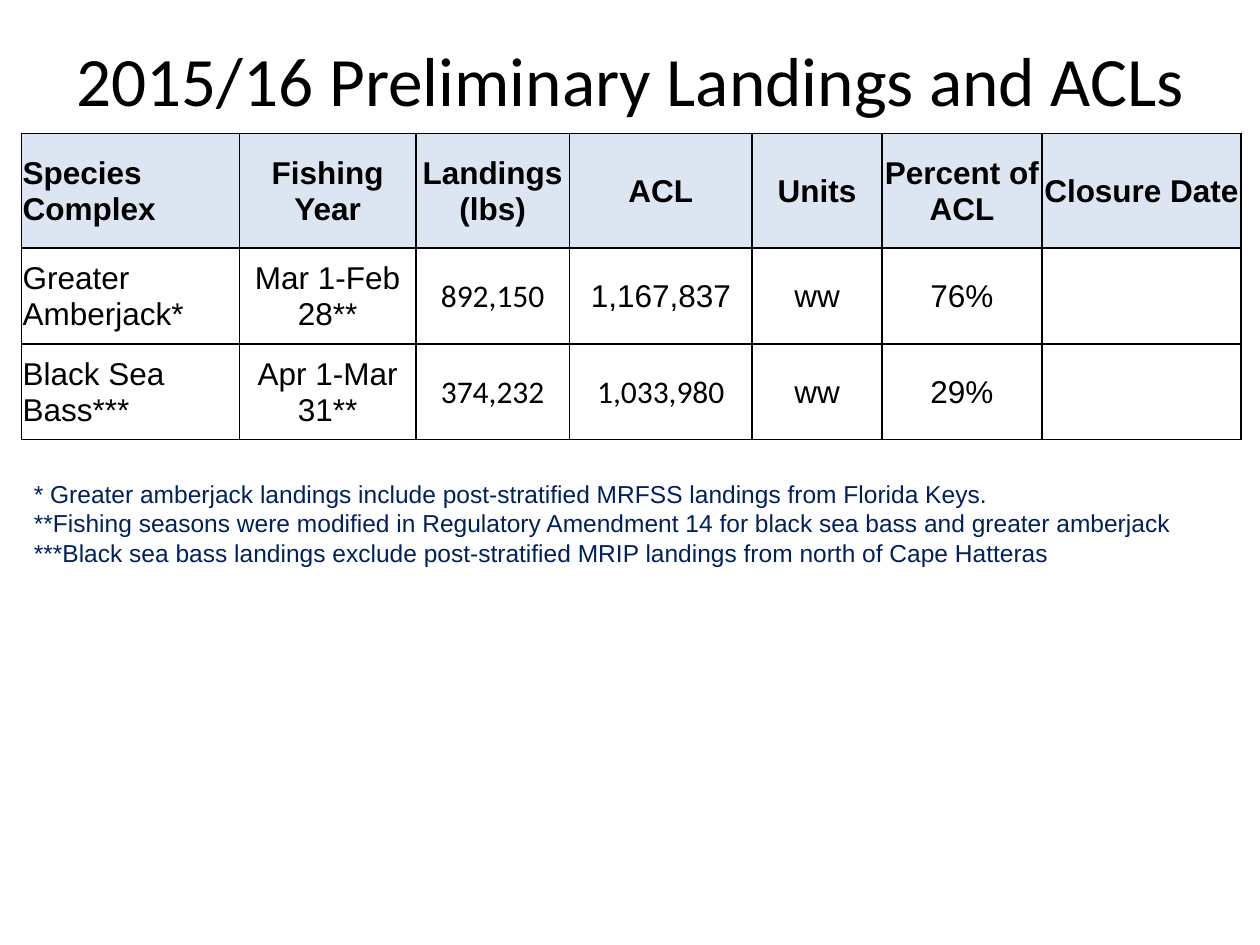
from lxml.etree import SubElement
from pptx import Presentation
from pptx.dml.color import RGBColor
from pptx.enum.text import MSO_ANCHOR, PP_ALIGN
from pptx.oxml.ns import qn
from pptx.util import Inches, Pt

COL_WIDTHS = [1.73, 1.4, 1.22, 1.45, 1.03, 1.27, 1.58]
ROW_HEIGHTS = [0.91, 0.76, 0.76]
ROWS = [
    ["Species Complex", "Fishing Year", "Landings (lbs)", "ACL", "Units",
     "Percent of ACL", "Closure Date"],
    ["Greater Amberjack*", "Mar 1-Feb 28**", "892,150", "1,167,837", "ww", "76%", ""],
    ["Black Sea Bass***", "Apr 1-Mar 31**", "374,232", "1,033,980", "ww", "29%", ""],
]
CALIBRI_VALUES = {"892,150", "374,232", "1,033,980"}
NOTES = [
    "* Greater amberjack landings include post-stratified MRFSS landings from Florida Keys.",
    "**Fishing seasons were modified in Regulatory Amendment 14 for black sea bass "
    "and greater amberjack",
    "***Black sea bass landings exclude post-stratified MRIP landings from north of "
    "Cape Hatteras",
]


def rgb(color):
    return RGBColor.from_string(color)


def write(tf, lines, size=18, font="Arial", color="000000", bold=False, align=PP_ALIGN.LEFT):
    for i, line in enumerate(lines):
        p = tf.paragraphs[0] if i == 0 else tf.add_paragraph()
        p.alignment = align
        r = p.add_run()
        r.text = line
        r.font.size = Pt(size)
        r.font.name = font
        r.font.bold = bold
        r.font.color.rgb = rgb(color)


def set_borders(cell, color="000000", width=1):
    tc_pr = cell._tc.get_or_add_tcPr()
    for i, side in enumerate(("a:lnL", "a:lnR", "a:lnT", "a:lnB")):
        ln = SubElement(tc_pr, qn(side), w=str(Pt(width)))
        fill = SubElement(ln, qn("a:solidFill"))
        SubElement(fill, qn("a:srgbClr"), val=color)
        tc_pr.remove(ln)
        tc_pr.insert(i, ln)  # borders come before the fill


def add_title(slide, left, top, width, height):
    tf = slide.shapes.add_textbox(left, top, width, height).text_frame
    tf.word_wrap = True
    tf.vertical_anchor = MSO_ANCHOR.MIDDLE
    write(tf, ["2015/16 Preliminary Landings and ACLs"], size=39.6, font="Calibri",
          align=PP_ALIGN.CENTER)


def add_notes(slide, left, top, width, height):
    tf = slide.shapes.add_textbox(left, top, width, height).text_frame
    tf.word_wrap = False
    write(tf, NOTES, size=14, color="002060")


def format_cell(cell, text, header, first):
    cell.vertical_anchor = MSO_ANCHOR.MIDDLE
    cell.margin_left = cell.margin_right = cell.margin_top = Inches(0.01)
    cell.margin_bottom = 0
    if header:
        cell.fill.solid()
        cell.fill.fore_color.rgb = rgb("DCE6F2")
    else:
        cell.fill.background()
    set_borders(cell)
    if text:
        write(cell.text_frame, [text], bold=header,
              font="Calibri" if text in CALIBRI_VALUES else "Arial",
              align=PP_ALIGN.LEFT if first else PP_ALIGN.CENTER)


def add_landings_table(slide, left, top, width, height):
    table = slide.shapes.add_table(len(ROWS), len(COL_WIDTHS), left, top, width, height).table
    for column, col_width in zip(table.columns, COL_WIDTHS):
        column.width = Inches(col_width)
    for row, row_height in zip(table.rows, ROW_HEIGHTS):
        row.height = Inches(row_height)
    for i, values in enumerate(ROWS):
        for j, text in enumerate(values):
            format_cell(table.cell(i, j), text, header=i == 0, first=j == 0)


def main():
    prs = Presentation()
    prs.slide_width, prs.slide_height = Inches(10), Inches(7.5)
    s = prs.slides.add_slide(prs.slide_layouts[6])
    left, width = Inches(0.17), Inches(9.67)
    add_title(s, left, 0, width, Inches(1.25))
    add_notes(s, left, Inches(3.75), Inches(9.27), Inches(1.28))
    add_landings_table(s, left, Inches(1.06), width, Inches(2.42))
    prs.save("out.pptx")


if __name__ == "__main__":
    main()
